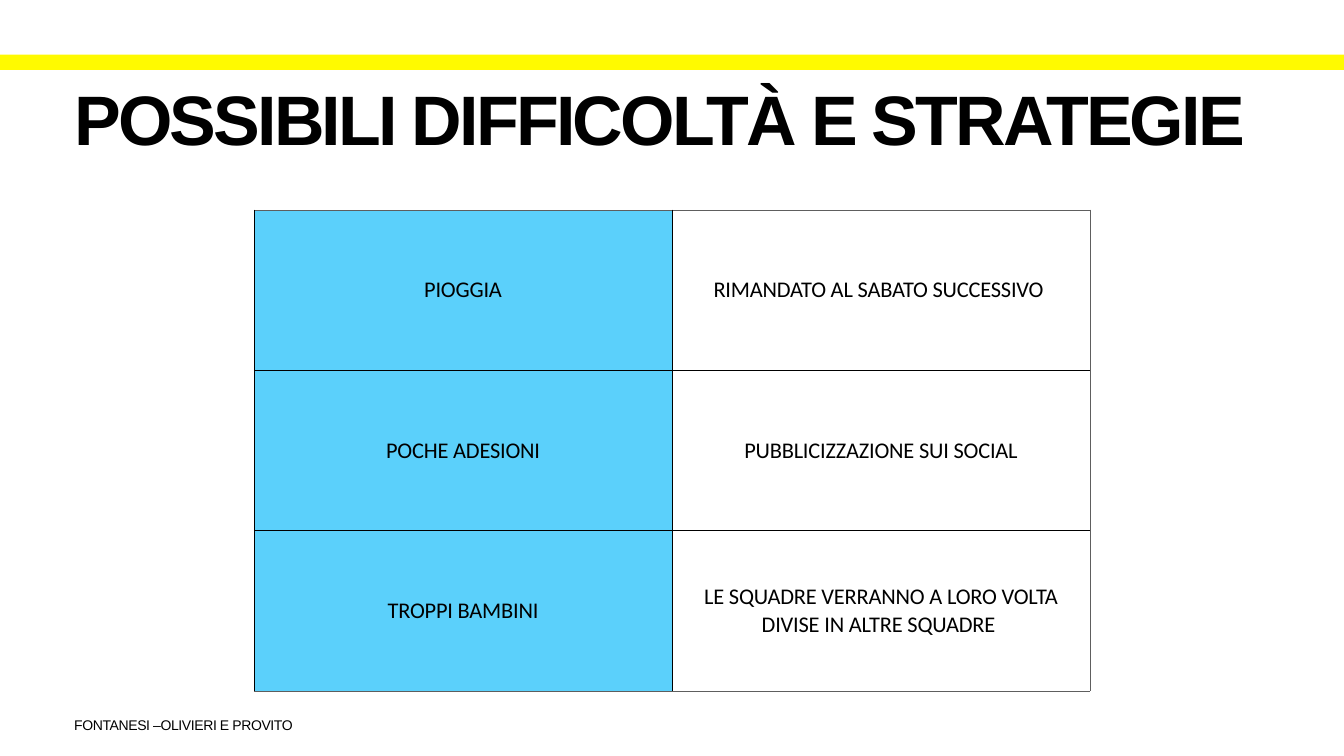
"""Build the slide on possible difficulties and strategies."""
import pptx
import pptx.dml.color
import pptx.enum.shapes
import pptx.enum.text
import pptx.oxml
import pptx.oxml.ns
import pptx.util

Pt = pptx.util.Pt
RGB = pptx.dml.color.RGBColor
ALIGN = pptx.enum.text.PP_ALIGN
ANCHOR = pptx.enum.text.MSO_ANCHOR

BLACK = RGB(0x00, 0x00, 0x00)
GREY = RGB(0x5E, 0x5E, 0x5E)
WHITE = RGB(0xFF, 0xFF, 0xFF)
YELLOW = RGB(0xFF, 0xFA, 0x00)
BLUE = RGB(0x5B, 0xD0, 0xFB)

INSET = Pt(4)
ROWS = [
    ("PIOGGIA", "RIMANDATO AL SABATO SUCCESSIVO "),
    ("POCHE ADESIONI", "PUBBLICIZZAZIONE SUI SOCIAL"),
    ("TROPPI BAMBINI",
     "LE SQUADRE VERRANNO A LORO VOLTA DIVISE IN ALTRE SQUADRE "),
]


def write(frame, text, size, font="Arial", bold=False, track=0,
          align=ALIGN.LEFT, lead=1.0):
    """Put one formatted paragraph in a text frame."""
    frame.word_wrap = True
    para = frame.paragraphs[0]
    para.alignment = align
    para.line_spacing = lead
    run = para.add_run()
    run.text = text
    run.font.size = Pt(size)
    run.font.name = font
    run.font.bold = bold
    run.font.color.rgb = BLACK
    run.font._element.set("spc", str(round(track * 100)))


def add_bar(slide, top, width, height):
    """Draw the yellow bar across the slide."""
    bar = slide.shapes.add_shape(
        pptx.enum.shapes.MSO_SHAPE.RECTANGLE, 0, Pt(top), Pt(width), Pt(height))
    bar.shadow.inherit = False
    bar.fill.solid()
    bar.fill.fore_color.rgb = YELLOW
    bar.line.fill.background()


def add_text(slide, text, left, top, width, height, **form):
    """Add a text box with even insets."""
    box = slide.shapes.add_textbox(Pt(left), Pt(top), Pt(width), Pt(height))
    frame = box.text_frame
    frame.margin_left = frame.margin_right = INSET
    frame.margin_top = frame.margin_bottom = INSET
    write(frame, text, **form)


def set_edge(cell, side, color):
    """Draw one border of a table cell."""
    space = pptx.oxml.ns.nsdecls("a")
    cell._tc.get_or_add_tcPr().append(pptx.oxml.parse_xml(
        f'<a:ln{side} {space} w="12700"><a:solidFill>'
        f'<a:srgbClr val="{color}"/></a:solidFill></a:ln{side}>'))


def add_table(slide, rows, left, top, width, height):
    """Add the table of difficulties and strategies."""
    count = len(rows)
    frame = slide.shapes.add_table(
        count, 2, Pt(left), Pt(top), Pt(width), Pt(height))
    table = frame.table
    table.first_row = table.horz_banding = False
    for r, row in enumerate(rows):
        table.rows[r].height = Pt(height / count)
        for c, text in enumerate(row):
            cell = table.cell(r, c)
            cell.margin_left = cell.margin_right = INSET
            cell.margin_top = cell.margin_bottom = INSET
            cell.vertical_anchor = ANCHOR.MIDDLE
            set_edge(cell, "L", BLACK)
            set_edge(cell, "R", GREY if c == 1 else BLACK)
            set_edge(cell, "T", GREY if r == 0 else BLACK)
            set_edge(cell, "B", GREY if r == count - 1 else BLACK)
            cell.fill.solid()
            cell.fill.fore_color.rgb = BLUE if c == 0 else WHITE
            write(cell.text_frame, text, size=32, font="Calibri",
                  track=-0.3, align=ALIGN.CENTER)


def main():
    """Build and save the slide."""
    deck = pptx.Presentation()
    deck.slide_width, deck.slide_height = Pt(1920), Pt(1080)
    slide = deck.slides.add_slide(deck.slide_layouts[6])
    add_bar(slide, 78, 1920, 22)
    add_text(slide, "FONTANESI –OLIVIERI E PROVITO", 102, 1020, 1722, 34,
             size=20, track=-0.6)
    add_text(slide, "POSSIBILI DIFFICOLTÀ E STRATEGIE", 102, 127.5, 1722, 140,
             size=100, bold=True, track=-4, lead=0.8)
    add_table(slide, ROWS, 363, 300, 1194, 687)
    deck.save("out.pptx")


if __name__ == "__main__":
    main()
